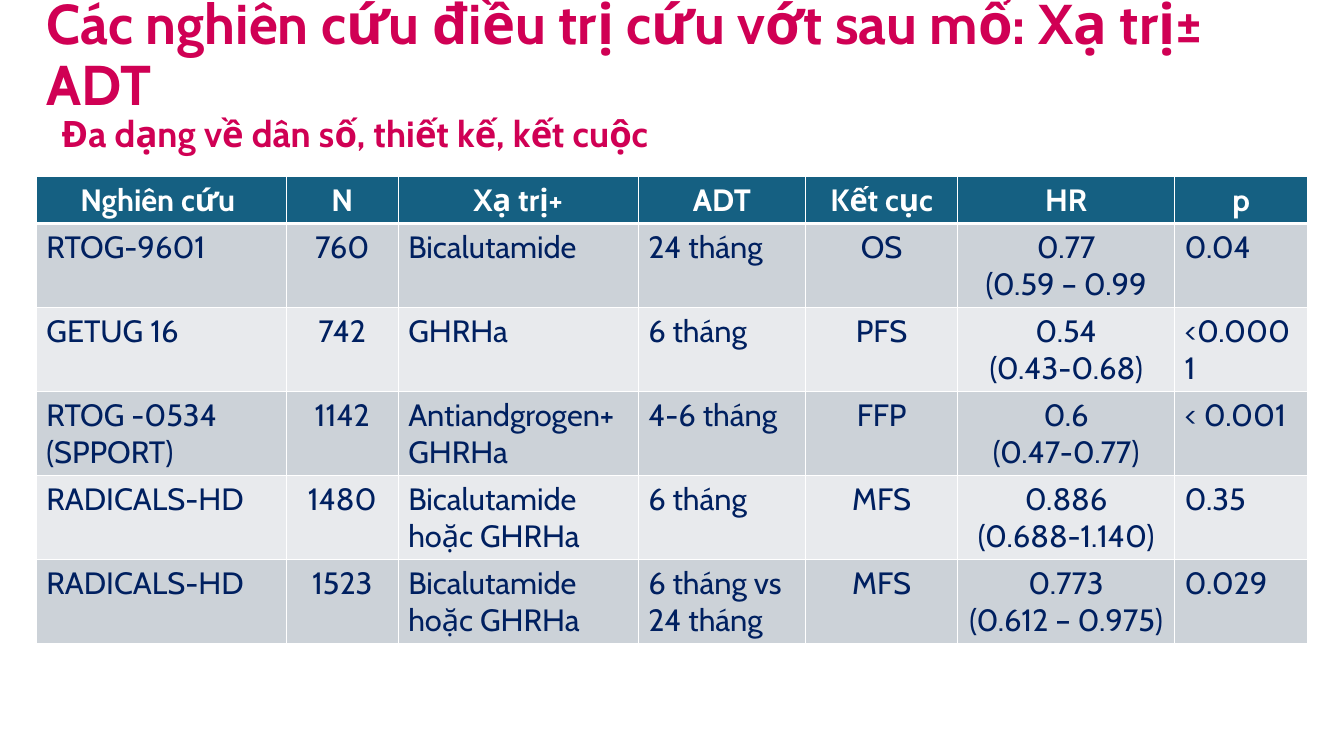
from lxml import etree
from pptx import Presentation
from pptx.dml.color import RGBColor
from pptx.enum.text import MSO_ANCHOR, MSO_AUTO_SIZE, PP_ALIGN
from pptx.oxml.ns import qn
from pptx.util import Inches, Pt

LEFT, CENTER, JUSTIFY = PP_ALIGN.LEFT, PP_ALIGN.CENTER, PP_ALIGN.JUSTIFY
MIDDLE, TOP = MSO_ANCHOR.MIDDLE, MSO_ANCHOR.TOP
GROW = MSO_AUTO_SIZE.SHAPE_TO_FIT_TEXT
TITLE_ONLY = 5

COLORS = {
    "heading": "D00054",
    "header": "156082",
    "body": "002060",
    "band_dark": "CCD2D8",
    "band_light": "E8EAED",
    "white": "FFFFFF",
}

COLUMN_WIDTHS = [2.48, 1.11, 2.38, 1.66, 1.51, 2.15, 1.32]
COLUMN_ALIGN = [LEFT, CENTER, LEFT, LEFT, CENTER, CENTER, LEFT]
STUDIES = [
    ["Nghiên cứu ", "N", "Xạ trị+", "ADT", "Kết cục", "HR", "p"],
    ["RTOG-9601", "760", "Bicalutamide", "24 tháng", "OS", "0.77\n(0.59 – 0.99", "0.04"],
    ["GETUG 16", "742", "GHRHa", "6 tháng", "PFS", "0.54\n(0.43-0.68)", "<0.0001"],
    ["RTOG -0534\n(SPPORT)", "1142", "Antiandgrogen+ GHRHa", "4-6 tháng", "FFP",
     "0.6\n(0.47-0.77)", "< 0.001"],
    ["RADICALS-HD", "1480", "Bicalutamide hoặc GHRHa", "6 tháng", "MFS",
     "0.886\n(0.688-1.140)", "0.35"],
    ["RADICALS-HD", "1523", "Bicalutamide hoặc GHRHa", "6 tháng vs\n24 tháng", "MFS",
     "0.773\n(0.612 – 0.975)", "0.029"],
]


class SlideBuilder:
    font = "Cabin"

    def __init__(self, prs):
        self.s = prs.slides.add_slide(prs.slide_layouts[TITLE_ONLY])

    def fill_text(self, tf, text, size, color, bold, **paragraph_format):
        tf.text = text
        for p in tf.paragraphs:
            for name, value in paragraph_format.items():
                setattr(p, name, value)
            for r in p.runs:
                font = {"name": self.font, "size": Pt(size), "bold": bold}
                for name, value in font.items():
                    setattr(r.font, name, value)
                r.font.color.rgb = RGBColor.from_string(COLORS[color])

    def frame(self, tf, anchor):
        settings = {"word_wrap": True, "auto_size": GROW, "vertical_anchor": anchor}
        for name, value in settings.items():
            setattr(tf, name, value)

    def title(self, text, left, top, width, height):
        sp = self.s.shapes.title
        box = {"left": left, "top": top, "width": width, "height": height}
        for name, value in box.items():
            setattr(sp, name, Inches(value))
        self.frame(sp.text_frame, MIDDLE)
        self.fill_text(sp.text_frame, text, 40, "heading", True,
                       alignment=LEFT, line_spacing=0.9)

    def subtitle(self, text, *box):
        sp = self.s.shapes.add_textbox(*map(Inches, box))
        self.frame(sp.text_frame, TOP)
        self.fill_text(sp.text_frame, text, 26, "heading", True, alignment=JUSTIFY,
                       line_spacing=1.1, space_after=Pt(8))

    def borders(self, cell, **widths):
        tcPr = cell._tc.get_or_add_tcPr()
        for side in "LRTB":
            ln = etree.SubElement(tcPr, qn(f"a:ln{side}"), w=str(Pt(widths.get(side, 1))))
            fill = etree.SubElement(ln, qn("a:solidFill"))
            etree.SubElement(fill, qn("a:srgbClr"), val=COLORS["white"])

    def table(self, rows, widths, aligns, row_height, *box):
        table = self.s.shapes.add_table(len(rows), len(widths), *map(Inches, box)).table
        for column, width in zip(table.columns, widths):
            column.width = Inches(width)
        for i, values in enumerate(rows):
            table.rows[i].height = Inches(row_height)
            header = i == 0
            band = "header" if header else "band_dark" if i % 2 else "band_light"
            thick = {0: {"B": 3}, 1: {"T": 3}}.get(i, {})
            for j, text in enumerate(values):
                cell = table.cell(i, j)
                self.borders(cell, **thick)
                cell.fill.solid()
                cell.fill.fore_color.rgb = RGBColor.from_string(COLORS[band])
                self.fill_text(cell.text_frame, text, 22, "white" if header else "body",
                               header, alignment=CENTER if header else aligns[j])


def main():
    prs = Presentation()
    prs.slide_width, prs.slide_height = Inches(13.33), Inches(7.5)
    slide = SlideBuilder(prs)
    slide.table(STUDIES, COLUMN_WIDTHS, COLUMN_ALIGN, 0.41, 0.36, 1.75, 12.62, 4.63)
    slide.title("Các nghiên cứu điều trị cứu vớt sau mổ: Xạ trị± ADT",
                0.36, 0.21, 12.41, 0.71)
    slide.subtitle("Đa dạng về dân số, thiết kế, kết cuộc", 0.51, 1.01, 6.52, 0.56)
    prs.save("out.pptx")


if __name__ == "__main__":
    main()
